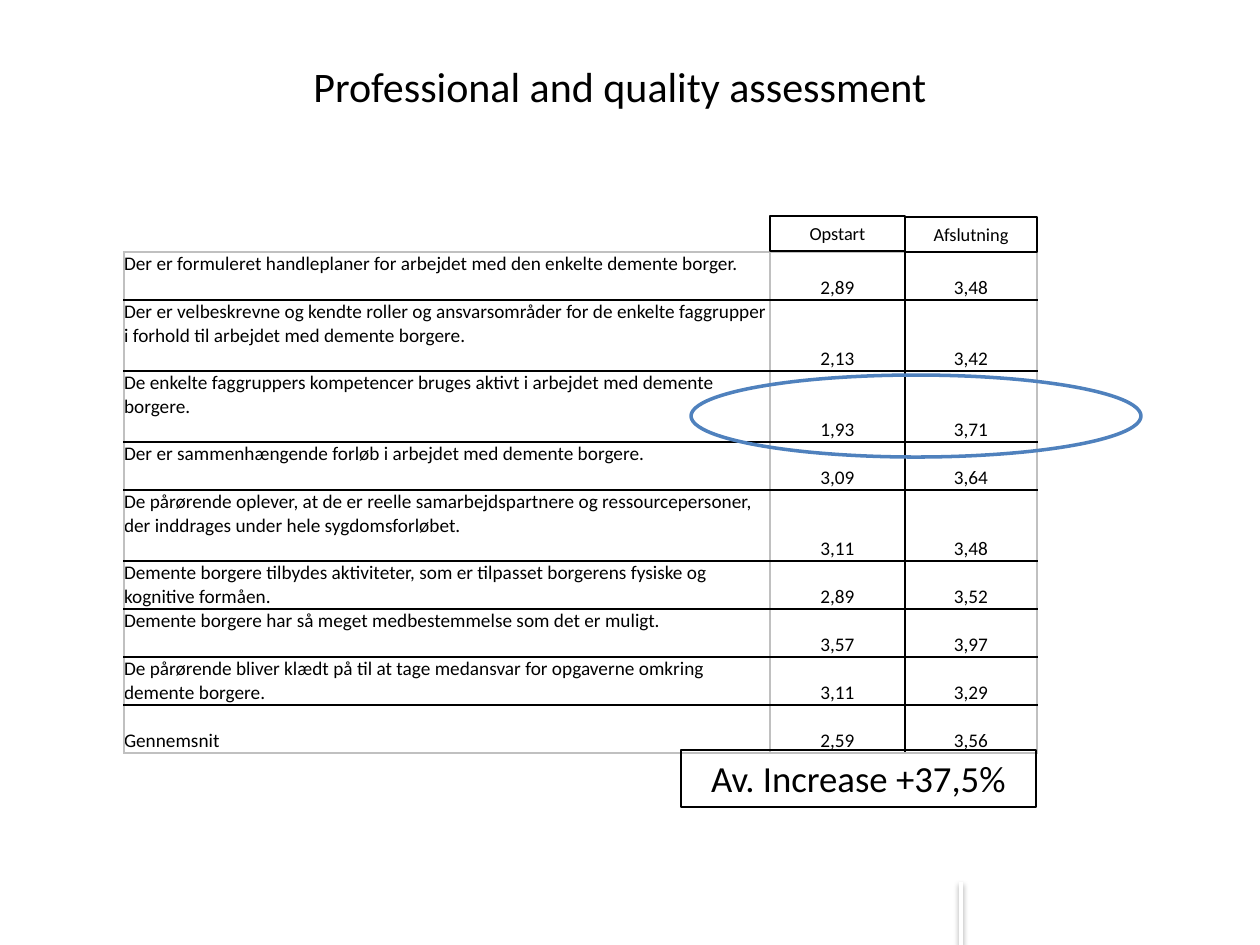
from dataclasses import dataclass

from lxml.etree import SubElement
from pptx import Presentation
from pptx.dml.color import RGBColor
from pptx.enum.shapes import MSO_CONNECTOR, MSO_SHAPE
from pptx.enum.text import MSO_ANCHOR, PP_ALIGN
from pptx.oxml import parse_xml
from pptx.oxml.ns import nsdecls, qn
from pptx.util import Emu, Inches, Pt

COLORS = {"ink": "000000", "edge": "C0C0C0", "ring": "4F81BD", "white": "FFFFFF"}
FONT = "Calibri"
PX_PER_INCH = 126
TABLE_TOP = 252
SHORT, TALL = 48, 71


@dataclass(frozen=True)
class Area:
    left: int
    top: int
    width: int
    height: int


@dataclass(frozen=True)
class Label:
    text: str
    area: Area
    size: float


@dataclass(frozen=True)
class Question:
    text: str
    start: str
    finish: str
    height: int = SHORT
    anchor: MSO_ANCHOR = MSO_ANCHOR.TOP


QUESTIONS = [
    Question("Der er formuleret handleplaner for arbejdet med den enkelte demente borger.",
             "2,89", "3,48"),
    Question("Der er velbeskrevne og kendte roller og ansvarsområder for de enkelte "
             "faggrupper i forhold til arbejdet med demente borgere.", "2,13", "3,42", TALL),
    Question("De enkelte faggruppers kompetencer bruges aktivt i arbejdet med demente "
             "borgere.", "1,93", "3,71", TALL),
    Question("Der er sammenhængende forløb i arbejdet med demente borgere.", "3,09", "3,64"),
    Question("De pårørende oplever, at de er reelle samarbejdspartnere og "
             "ressourcepersoner, der inddrages under hele sygdomsforløbet.",
             "3,11", "3,48", TALL),
    Question("Demente borgere tilbydes aktiviteter, som er tilpasset borgerens fysiske og "
             "kognitive formåen.", "2,89", "3,52"),
    Question("Demente borgere har så meget medbestemmelse som det er muligt.",
             "3,57", "3,97"),
    Question("De pårørende bliver klædt på til at tage medansvar for opgaverne omkring "
             "demente borgere.", "3,11", "3,29"),
    Question("Gennemsnit", "2,59", "3,56", anchor=MSO_ANCHOR.BOTTOM),
]

LABELS = [
    Label("Opstart", Area(770, 216, 135, 35), 10.5),
    Label("Afslutning", Area(905, 217, 132, 35), 10.5),
    Label("Av. Increase +37,5%", Area(681, 750, 355, 57), 21),
]


def px(length: int) -> Emu:
    return Emu(round(length * Inches(1) / PX_PER_INCH))


def frame(area: Area) -> tuple[Emu, ...]:
    return px(area.left), px(area.top), px(area.width), px(area.height)


def color(name: str) -> RGBColor:
    return RGBColor.from_string(COLORS[name])


def write(text_frame, text: str, size: float, align: PP_ALIGN) -> None:
    para = text_frame.paragraphs[0]
    para.text = text
    para.alignment = align
    para.font.size = Pt(size)
    para.font.name = FONT
    para.font.color.rgb = color("ink")


def add_outline(page, kind: MSO_SHAPE, area: Area, line: str, width: float):
    shape = page.shapes.add_shape(kind, *frame(area))
    shape.shadow.inherit = False
    shape.fill.background()
    shape.line.color.rgb = color(line)
    shape.line.width = Pt(width)
    return shape


def add_label(page, label: Label) -> None:
    box = add_outline(page, MSO_SHAPE.RECTANGLE, label.area, "ink", 0.75)
    box.text_frame.word_wrap = True
    box.text_frame.vertical_anchor = MSO_ANCHOR.TOP
    write(box.text_frame, label.text, label.size, PP_ALIGN.CENTER)


def set_borders(cell, outer_sides: dict[str, bool]) -> None:
    properties = cell._tc.get_or_add_tcPr()
    for side, is_outer in outer_sides.items():
        line = SubElement(properties, qn(f"a:ln{side}"), w=str(Pt(1)))
        fill = SubElement(line, qn("a:solidFill"))
        SubElement(fill, qn("a:srgbClr"), val=COLORS["edge" if is_outer else "ink"])


def add_grid(page, left: int, widths: list[int], rows: list[tuple[str, ...]],
             anchors: list[MSO_ANCHOR], align: PP_ALIGN) -> None:
    heights = [question.height for question in QUESTIONS]
    area = Area(left, TABLE_TOP, sum(widths), sum(heights))
    table = page.shapes.add_table(len(rows), len(widths), *frame(area)).table
    table.first_row = table.horz_banding = False
    for column, width in zip(table.columns, widths):
        column.width = px(width)
    for row, height in zip(table.rows, heights):
        row.height = px(height)
    for r, texts in enumerate(rows):
        for c, text in enumerate(texts):
            cell = table.cell(r, c)
            set_borders(cell, {"L": c == 0, "R": c == len(widths) - 1,
                               "T": r == 0, "B": r == len(rows) - 1})
            cell.fill.background()
            cell.margin_left = cell.margin_right = 0
            cell.margin_top = cell.margin_bottom = 0
            cell.vertical_anchor = anchors[r]
            write(cell.text_frame, text, 11, align)


def add_footer_line(page) -> None:
    line = page.shapes.add_connector(MSO_CONNECTOR.STRAIGHT,
                                     px(961), px(882), px(961), px(945))
    line.line.color.rgb = color("white")
    line.line.width = Pt(2)
    line._element.spPr.append(parse_xml(
        f'<a:effectLst {nsdecls("a")}>'
        f'<a:outerShdw blurRad="{Pt(3.1)}" dist="{Pt(1.6)}" dir="5400000" rotWithShape="0">'
        f'<a:srgbClr val="{COLORS["ink"]}"><a:alpha val="38000"/></a:srgbClr>'
        '</a:outerShdw></a:effectLst>'))


def main() -> None:
    deck = Presentation()
    deck.slide_width, deck.slide_height = Inches(10), Inches(7.5)
    page = deck.slides.add_slide(deck.slide_layouts[6])
    add_footer_line(page)

    # Title
    title = page.shapes.add_textbox(*frame(Area(123, 52, 994, 118))).text_frame
    title.word_wrap = True
    title.margin_top = px(9)
    write(title, "Professional and quality assessment", 24, PP_ALIGN.CENTER)

    # Scores and questions
    add_grid(page, 770, [135, 132], [(q.start, q.finish) for q in QUESTIONS],
             [MSO_ANCHOR.BOTTOM] * len(QUESTIONS), PP_ALIGN.CENTER)
    add_grid(page, 124, [646], [(q.text,) for q in QUESTIONS],
             [q.anchor for q in QUESTIONS], PP_ALIGN.LEFT)

    # Column heads, result and highlight
    for label in LABELS:
        add_label(page, label)
    add_outline(page, MSO_SHAPE.OVAL, Area(691, 375, 450, 82), "ring", 2)

    deck.save("out.pptx")


if __name__ == "__main__":
    main()
